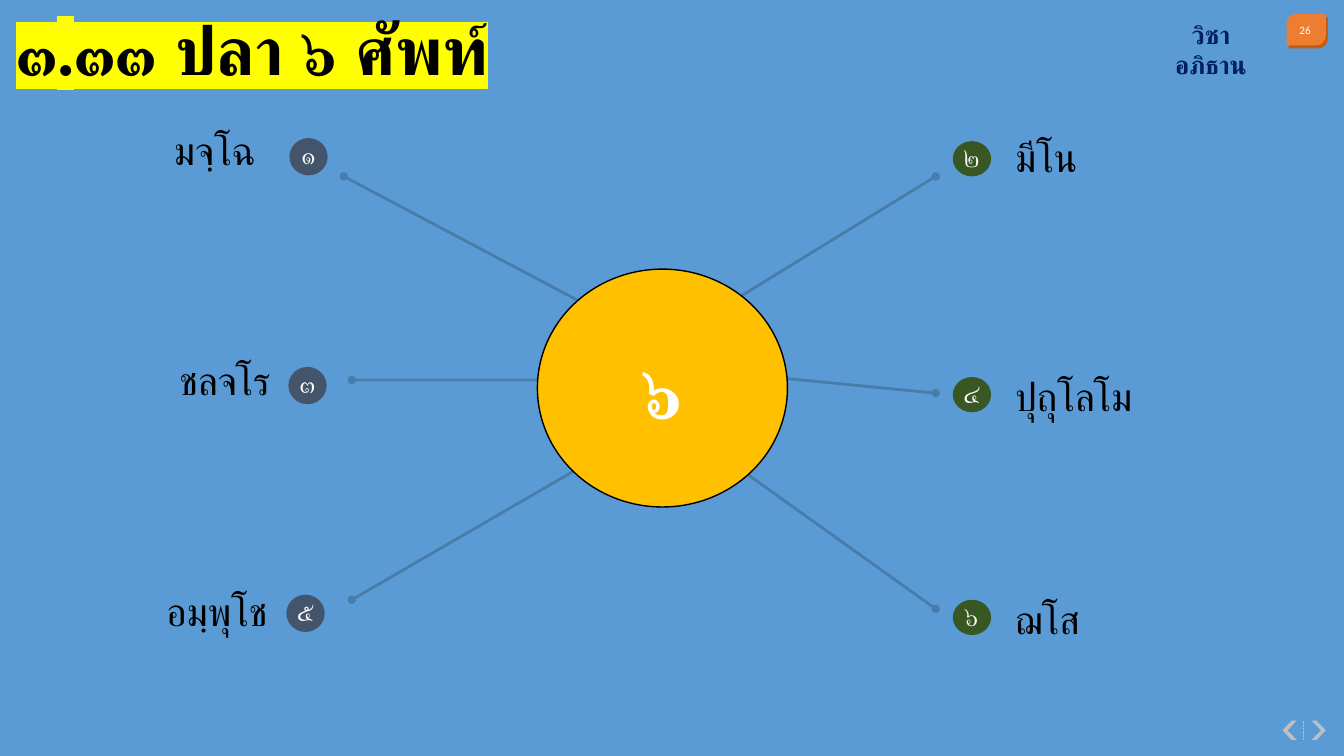
from lxml.etree import SubElement
from pptx import Presentation
from pptx.dml.color import RGBColor
from pptx.enum.dml import MSO_LINE
from pptx.enum.shapes import MSO_CONNECTOR, MSO_SHAPE
from pptx.enum.text import MSO_ANCHOR, MSO_AUTO_SIZE, PP_ALIGN
from pptx.oxml.ns import qn
from pptx.util import Pt

COLORS = {
    "sky": "5B9BD5", "black": "000000", "white": "FFFFFF", "offwhite": "FEFEFE",
    "yellow": "FFFF00", "gold": "FFC000", "navy": "002060", "slate": "44546A",
    "green": "385723", "orange": "ED7D31", "rust": "C55A11", "gray": "BFBFBF",
}
EMU_PER_PX = 9144  # 100 px to the inch

# number, word, badge left and top, label left and top, label width
LEFT_WORDS = [
    ("๑", "มจฺโฉ ", 287, 137, 20, 120, 253),
    ("๓", "ชลจโร", 286, 364, 43, 349, 235),
    ("๕", "อมฺพุโช", 284, 590, 43, 578, 232),
]
RIGHT_WORDS = [
    ("๒", "มีโน", 945, 140, 997, 127, 296),
    ("๔", "ปุถุโลโม", 945, 374, 997, 364, 268),
    ("๖", "ฌโส", 945, 595, 997, 586, 228),
]
# hub end, then dotted end
SPOKES = [
    (551, 377, 349, 377), (592, 308, 341, 175), (728, 298, 928, 175),
    (754, 373, 928, 390), (728, 461, 928, 604), (580, 461, 349, 595),
]


def px(*values):
    return [v * EMU_PER_PX for v in values]


def rgb(name):
    return RGBColor.from_string(COLORS[name])


class Canvas:
    def __init__(self, prs):
        self.slide = prs.slides.add_slide(prs.slide_layouts[5])
        self.shapes = self.slide.shapes
        fill = self.slide.background.fill
        fill.solid()
        fill.fore_color.rgb = rgb("sky")

    def set_text(self, sp, text, size, font, color, bold=False,
                 align=PP_ALIGN.LEFT, anchor=MSO_ANCHOR.TOP):
        tf = sp.text_frame
        tf.word_wrap = True
        tf.auto_size = MSO_AUTO_SIZE.NONE
        tf.vertical_anchor = anchor
        tf.text = text
        p = tf.paragraphs[0]
        p.alignment = align
        r = p.runs[0]
        r.font.size = Pt(size)
        r.font.name = font
        r.font.bold = bold
        r.font.color.rgb = rgb(color)
        return p

    def title(self, text, x, y, w, h):
        sp = self.shapes.title
        sp.left, sp.top, sp.width, sp.height = px(x, y, w, h)
        p = self.set_text(sp, text, 48, "Times New Roman", "black", True,
                          anchor=MSO_ANCHOR.MIDDLE)
        p.space_before = Pt(6)
        p.line_spacing = 1.0
        rpr = p.runs[0].font._element
        highlight = SubElement(rpr, qn("a:highlight"))
        SubElement(highlight, qn("a:srgbClr"), val=COLORS["yellow"])
        rpr.find(qn("a:latin")).addprevious(highlight)

    def text(self, text, x, y, w, h, size, font, color, **style):
        sp = self.shapes.add_textbox(*px(x, y, w, h))
        self.set_text(sp, text, size, font, color, **style)

    def shape(self, kind, x, y, w, h, color, adjust=None, rotation=0):
        sp = self.shapes.add_shape(kind, *px(x, y, w, h))
        sp.shadow.inherit = False
        sp.fill.solid()
        sp.fill.fore_color.rgb = rgb(color)
        sp.line.fill.background()
        sp.rotation = rotation
        if adjust is not None:
            sp.adjustments[0] = adjust
        return sp

    def line(self, x1, y1, x2, y2, color, width):
        cx = self.shapes.add_connector(MSO_CONNECTOR.STRAIGHT, *px(x1, y1, x2, y2))
        cx.line.color.rgb = rgb(color)
        cx.line.width = Pt(width)
        SubElement(cx._element.spPr, qn("a:effectLst"))
        return cx

    def spoke(self, x1, y1, x2, y2):
        """Draw a faint line from the hub that ends in a dot."""
        cx = self.line(x1, y1, x2, y2, "black", 2)
        ln = cx._element.spPr.find(qn("a:ln"))
        SubElement(ln.find(".//" + qn("a:srgbClr")), qn("a:alpha"), val="20000")
        SubElement(ln, qn("a:tailEnd"), type="oval")

    def badge(self, number, x, y, h, color):
        self.shape(MSO_SHAPE.OVAL, x, y, 38, h, color)
        self.text(number, x - 16, y - 13, 70, 57, 20, "Montserrat", "offwhite",
                  align=PP_ALIGN.CENTER, anchor=MSO_ANCHOR.MIDDLE)

    def hub(self, text, x, y, w, h):
        sp = self.shape(MSO_SHAPE.OVAL, x, y, w, h, "gold")
        sp.line.color.rgb = rgb("black")
        sp.line.width = Pt(1)
        self.set_text(sp, text, 54, "Lato", "white", True,
                      PP_ALIGN.CENTER, MSO_ANCHOR.MIDDLE)
        tf = sp.text_frame
        tf.margin_left = tf.margin_right = tf.margin_top = tf.margin_bottom = 0

    def page_marks(self):
        for x, y, color in [(1278, 17, "rust"), (1276, 14, "orange")]:
            self.shape(MSO_SHAPE.ROUND_2_DIAG_RECTANGLE, x, y, 39, 31, color, 0.32)
        self.text("26", 1271, 19, 47, 21, 8, "Calibri", "offwhite",
                  align=PP_ALIGN.CENTER, anchor=MSO_ANCHOR.MIDDLE)
        for x, rotation, adjust in [(1301, 0, 0.66), (1272, 180, 0.64)]:
            self.shape(MSO_SHAPE.CHEVRON, x, 715, 14, 19, "gray", adjust, rotation)
        divider = self.line(1293, 734, 1293, 715, "gray", 0.5)
        divider.line.dash_style = MSO_LINE.ROUND_DOT


def main():
    prs = Presentation()
    prs.slide_width, prs.slide_height = px(1333, 750)
    s = Canvas(prs)
    s.page_marks()
    for spoke in SPOKES:
        s.spoke(*spoke)
    s.title("๓.๓๓ ปลา ๖ ศัพท์", 6, 3, 1071, 91)
    s.text("วิชาอภิธาน", 1152, 14, 98, 40, 18, "Lato", "navy",
           bold=True, align=PP_ALIGN.CENTER)
    for words, color, badge_h, align in [
        (LEFT_WORDS, "slate", 37, PP_ALIGN.RIGHT),
        (RIGHT_WORDS, "green", 35, PP_ALIGN.LEFT),
    ]:
        for number, word, badge_x, badge_y, x, y, w in words:
            s.badge(number, badge_x, badge_y, badge_h, color)
            s.text(word, x, y, w, 57, 28, "Lato", "black", align=align)
    s.hub("๖", 533, 267, 248, 236)
    prs.save("out.pptx")


if __name__ == "__main__":
    main()
